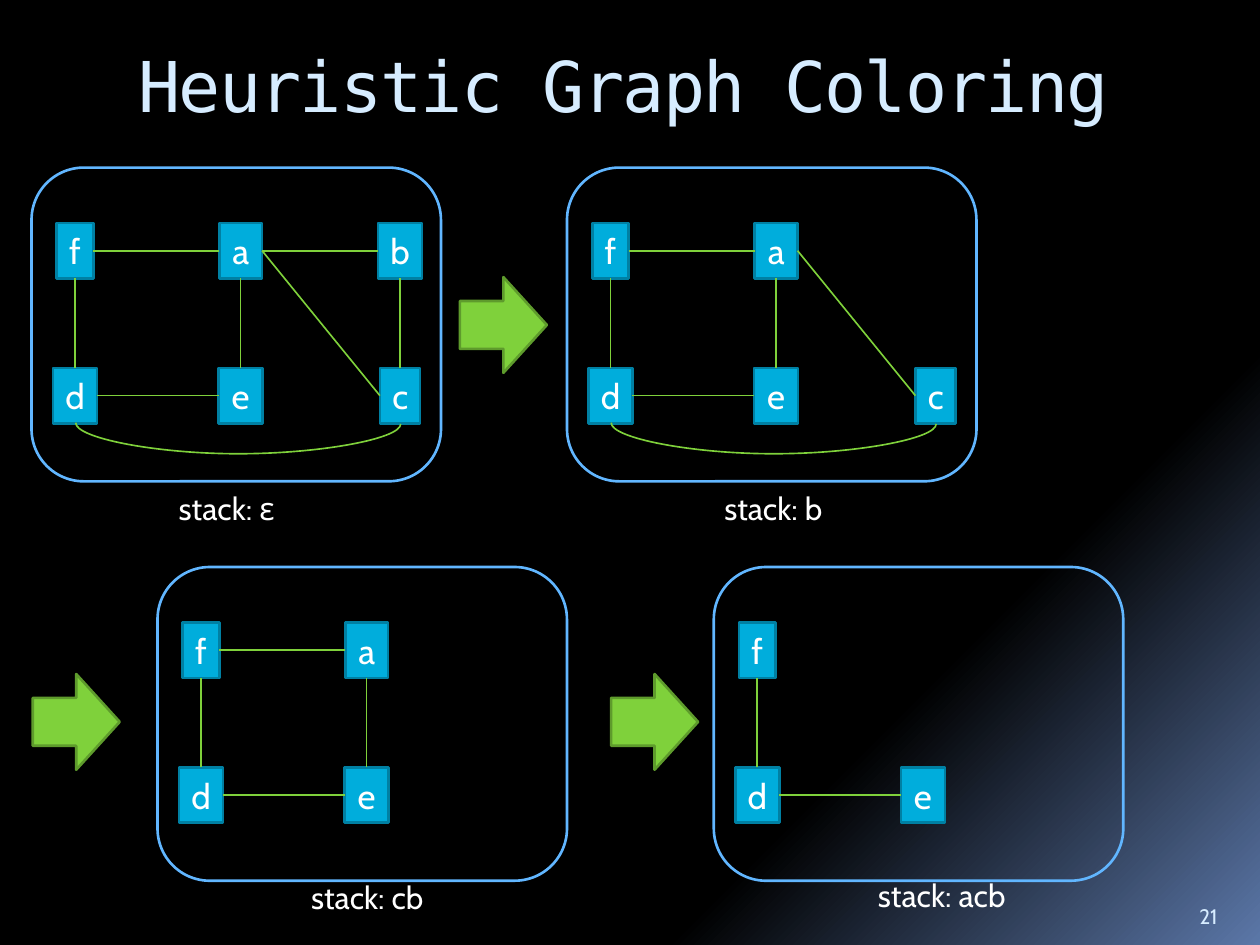
from pptx import Presentation
from pptx.dml.color import RGBColor
from pptx.enum.shapes import MSO_CONNECTOR as Conn, MSO_SHAPE as Shape
from pptx.enum.text import MSO_ANCHOR as Anchor, MSO_AUTO_SIZE as AutoSize, PP_ALIGN as Align
from pptx.oxml.ns import qn
from pptx.util import Inches, Pt
from lxml import etree

WIDTH, HEIGHT = Inches(10), Inches(7.5)
TOP, LEFT, BOTTOM, RIGHT = range(4)

# Lengths are percentages of the slide's width and height.
PANEL_W, PANEL_H = 32.5, 33.2
NODE_H = 5.87
COLS = 3.45, 16.6, 29.25  # node centres within a panel
ROWS = 5.87, 21.2         # node tops within a panel

# name: (column, row, width)
NODES = {
    "f": (0, 0, 2.9), "a": (1, 0, 3.4), "b": (2, 0, 3.5),
    "d": (0, 1, 3.5), "e": (1, 1, 3.5), "c": (2, 1, 3.2),
}
EDGES = [
    ("f", RIGHT, "a", LEFT), ("a", RIGHT, "b", LEFT),
    ("d", TOP, "f", BOTTOM), ("e", LEFT, "d", RIGHT),
    ("a", BOTTOM, "e", TOP), ("b", BOTTOM, "c", TOP),
    ("a", RIGHT, "c", LEFT),
]
# left, top, remaining nodes
PANELS = [
    (2.5, 17.73, "fabdec"), (45, 17.73, "fadec"),
    (12.5, 60, "fade"), (56.65, 60, "fde"),
]
ARROWS = [(36.5, 29.33), (2.6, 71.33), (48.5, 71.33)]
# left, top, width, stack content
CAPTIONS = [
    (13.2, 51.07, 9.8, "ε"), (56.5, 51.07, 10, "b"),
    (23.7, 92.27, 11.1, "cb"), (68.7, 92, 12.4, "acb"),
]


def color(value):
    return RGBColor.from_string(value)


def grid(x, y, w, h):
    """Turn percentages of the slide into lengths."""
    return [int(n * size / 100) for n, size in zip((x, y, w, h), (WIDTH, HEIGHT) * 2)]


def set_background(s):
    fill = s.background.fill
    fill.gradient()
    fill.gradient_angle = 315
    for stop, position, value in zip(fill.gradient_stops, (0.73, 1), ("000000", "5B77A8")):
        stop.position = position
        stop.color.rgb = color(value)


def add_run(p, text, size, value="FFFFFF", font="Cabin"):
    r = p.add_run()
    r.text = text
    r.font.size = Pt(size)
    r.font.name = font
    r.font.color.rgb = color(value)
    return r


def add_text(s, box, text, size, value="FFFFFF", font="Cabin", wrap=True):
    tf = s.shapes.add_textbox(*grid(*box)).text_frame
    tf.word_wrap = wrap
    if not wrap:
        tf.auto_size = AutoSize.SHAPE_TO_FIT_TEXT
    return tf, add_run(tf.paragraphs[0], text, size, value, font)


def add_title(s, text):
    tf, r = add_text(s, (10, 3.33, 85, 13.33), text, 40, "D6ECFF", "DejaVu Sans Mono")
    tf.margin_top = Inches(0.09)
    r.font._element.set("spc", "-100")


def add_shape(s, kind, box, line, fill=None):
    sp = s.shapes.add_shape(kind, *grid(*box))
    sp.shadow.inherit = False
    if fill:
        sp.fill.solid()
        sp.fill.fore_color.rgb = color(fill)
    else:
        sp.fill.background()
    sp.line.color.rgb = color(line)
    sp.line.width = Pt(1.5)
    return sp


def add_node(s, x, y, name):
    col, row, w = NODES[name]
    box = x + COLS[col] - w / 2, y + ROWS[row], w, NODE_H
    sp = add_shape(s, Shape.RECTANGLE, box, "0080A3", "00ADDC")
    tf = sp.text_frame
    tf.word_wrap = False
    tf.auto_size = AutoSize.SHAPE_TO_FIT_TEXT
    tf.vertical_anchor = Anchor.MIDDLE
    p = tf.paragraphs[0]
    p.alignment = Align.CENTER
    add_run(p, name, 20)
    return sp


def add_connector(s, kind, *ends):
    cxn = s.shapes.add_connector(kind, *ends)
    cxn.line.color.rgb = color("7FD13B")
    cxn.line.width = Pt(0.94)
    etree.SubElement(cxn._element.spPr, qn("a:effectLst"))
    return cxn


def add_edge(s, start, start_side, end, end_side):
    cxn = add_connector(s, Conn.STRAIGHT, 0, 0, 0, 0)
    cxn.begin_connect(start, start_side)
    cxn.end_connect(end, end_side)


def add_arc(s, x, y):
    """Sagging curve from d to c: a thin curved connector turned by 270 degrees."""
    mid_x, mid_y, _, _ = grid(x + 16.4, y + 27.07, 0, 0)
    thin, span = Inches(0.01), Inches(2.58)
    left, top = mid_x - thin // 2, mid_y - span // 2
    cxn = add_connector(s, Conn.CURVE, left, top, left + thin, top + span)
    spPr = cxn._element.spPr
    xfrm = spPr.find(qn("a:xfrm"))
    xfrm.set("rot", "16200000")
    xfrm.set("flipH", "1")
    guides = spPr.find(qn("a:prstGeom")).find(qn("a:avLst"))
    etree.SubElement(guides, qn("a:gd"), name="adj1", fmla="val 2500000")


def add_panel(s, x, y, names):
    nodes = {name: add_node(s, x, y, name) for name in names}
    for start, start_side, end, end_side in EDGES:
        if start in nodes and end in nodes:
            add_edge(s, nodes[start], start_side, nodes[end], end_side)
    if "c" in nodes:
        add_arc(s, x, y)
    add_shape(s, Shape.ROUNDED_RECTANGLE, (x, y, PANEL_W, PANEL_H), "61B6FF")


def main():
    prs = Presentation()
    prs.slide_width, prs.slide_height = WIDTH, HEIGHT
    s = prs.slides.add_slide(prs.slide_layouts[6])
    set_background(s)
    tf, _ = add_text(s, (94.2, 93.6, 5, 5.33), "21", 12, "D6ECFF")
    tf.vertical_anchor = Anchor.BOTTOM
    add_title(s, "Heuristic Graph Coloring")
    for panel in PANELS:
        add_panel(s, *panel)
    for x, y in ARROWS:
        add_shape(s, Shape.RIGHT_ARROW, (x, y, 6.9, 10.13), "5E9B2C", "7FD13B")
    for x, y, w, stack in CAPTIONS:
        add_text(s, (x, y, w, 5.33), f"stack: {stack}", 18, wrap=False)
    prs.save("out.pptx")


if __name__ == "__main__":
    main()
